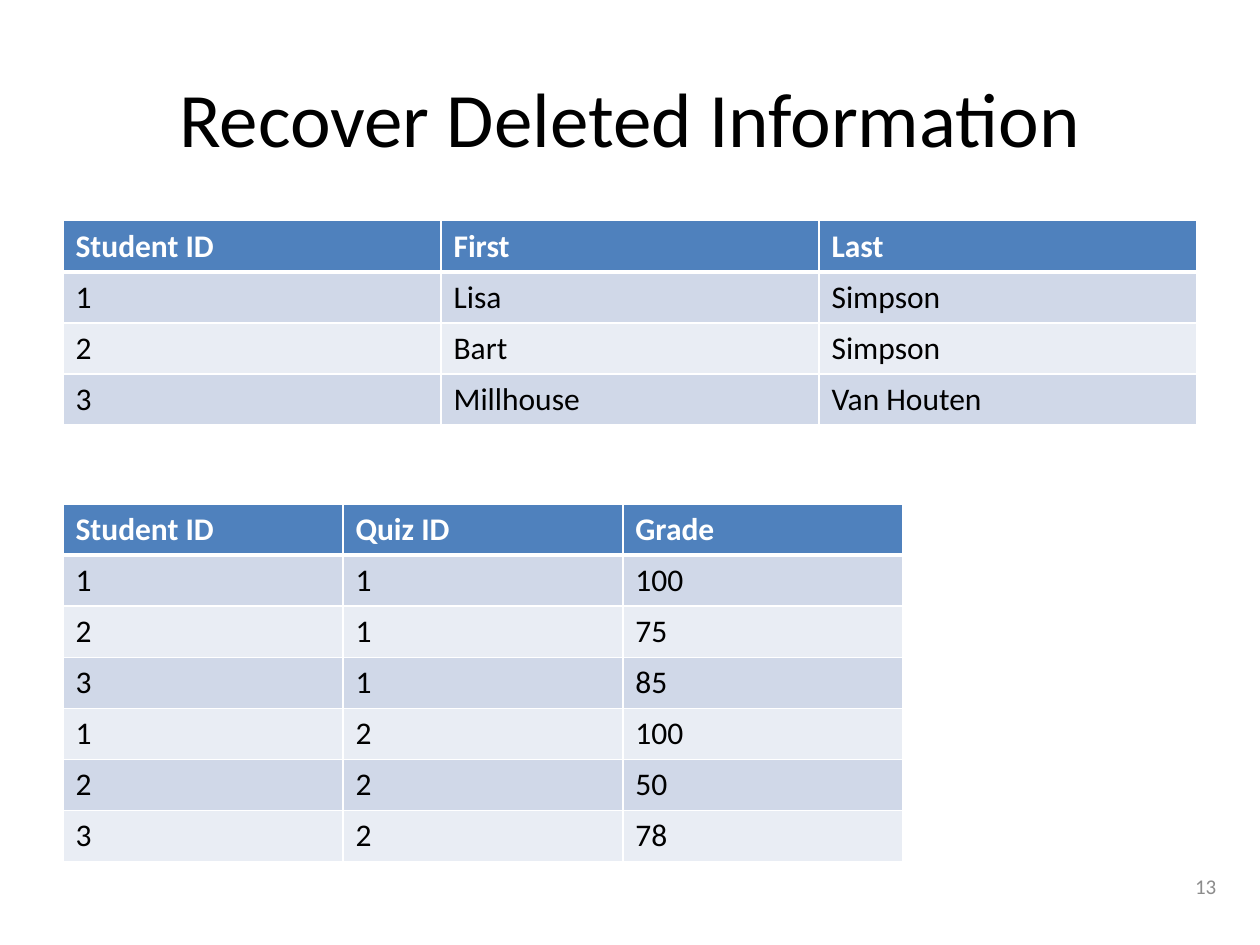
from dataclasses import dataclass

from lxml.etree import SubElement
from pptx import Presentation
from pptx.dml.color import RGBColor
from pptx.enum.text import MSO_ANCHOR, PP_ALIGN
from pptx.oxml.ns import qn
from pptx.util import Cm, Pt

COLORS = {
    "header": "4F81BD",
    "odd_row": "D0D8E8",
    "even_row": "E9EDF4",
    "white": "FFFFFF",
    "black": "000000",
    "gray": "8C8C8C",
}
FONT = "Calibri"
MARGIN = 1.27
ROW_HEIGHT = 1.03
THIN, THICK = 1, 3


@dataclass
class TableSpec:
    """A table with its header in the first row; lengths in centimetres."""
    top: float
    width: float
    rows: list[tuple[str, ...]]


TABLES = [
    TableSpec(4.45, 22.86, [
        ("Student ID", "First", "Last"),
        ("1", "Lisa", "Simpson"),
        ("2", "Bart", "Simpson"),
        ("3", "Millhouse", "Van Houten"),
    ]),
    TableSpec(10.16, 16.93, [
        ("Student ID", "Quiz ID", "Grade"),
        ("1", "1", "100"),
        ("2", "1", "75"),
        ("3", "1", "85"),
        ("1", "2", "100"),
        ("2", "2", "50"),
        ("3", "2", "78"),
    ]),
]


def write_text(text_frame, text: str, size: int, color: str,
               alignment=PP_ALIGN.LEFT, bold: bool = False) -> None:
    paragraph = text_frame.paragraphs[0]
    paragraph.alignment = alignment
    run = paragraph.add_run()
    run.text = text
    font_format = {"name": FONT, "size": Pt(size), "bold": bold}
    for attribute, value in font_format.items():
        setattr(run.font, attribute, value)
    run.font.color.rgb = RGBColor.from_string(COLORS[color])


def place(shape, left: float, top: float, width: float, height: float) -> None:
    position = {"left": left, "top": top, "width": width, "height": height}
    for attribute, value in position.items():
        setattr(shape, attribute, Cm(value))


def add_borders(cell, row_index: int) -> None:
    widths = {
        "lnL": THIN,
        "lnR": THIN,
        "lnT": THICK if row_index == 1 else THIN,
        "lnB": THICK if row_index == 0 else THIN,
    }
    properties = cell._tc.get_or_add_tcPr()
    for side, width in widths.items():
        line = SubElement(properties, qn(f"a:{side}"), w=str(Pt(width)))
        fill = SubElement(line, qn("a:solidFill"))
        SubElement(fill, qn("a:srgbClr"), val=COLORS["white"])


def row_fill(row_index: int) -> str:
    if row_index == 0:
        return "header"
    return "odd_row" if row_index % 2 else "even_row"


def add_data_table(slide, spec: TableSpec) -> None:
    row_count, column_count = len(spec.rows), len(spec.rows[0])
    table = slide.shapes.add_table(
        row_count, column_count, Cm(MARGIN), Cm(spec.top),
        Cm(spec.width), Cm(ROW_HEIGHT * row_count)).table
    for row_index, values in enumerate(spec.rows):
        is_header = row_index == 0
        for column_index, value in enumerate(values):
            cell = table.cell(row_index, column_index)
            add_borders(cell, row_index)
            cell.fill.solid()
            cell.fill.fore_color.rgb = RGBColor.from_string(
                COLORS[row_fill(row_index)])
            write_text(cell.text_frame, value, 18,
                       "white" if is_header else "black", bold=is_header)


def main() -> None:
    presentation = Presentation()
    presentation.slide_width = Cm(25.4)
    presentation.slide_height = Cm(19.05)
    slide = presentation.slides.add_slide(
        presentation.slide_layouts.get_by_name("Title Only"))

    # Title
    title = slide.shapes.title
    place(title, MARGIN, 0.76, 22.86, 3.18)
    title.text_frame.vertical_anchor = MSO_ANCHOR.MIDDLE
    write_text(title.text_frame, "Recover Deleted Information", 44, "black",
               PP_ALIGN.CENTER)

    # Student and grade tables
    for spec in TABLES:
        add_data_table(slide, spec)

    # Slide number
    number = slide.shapes.add_textbox(Cm(18.85), Cm(17.35), Cm(5.92), Cm(1.02))
    number.text_frame.word_wrap = True
    number.text_frame.vertical_anchor = MSO_ANCHOR.MIDDLE
    write_text(number.text_frame, "13", 12, "gray", PP_ALIGN.RIGHT)

    presentation.save("out.pptx")


if __name__ == "__main__":
    main()
